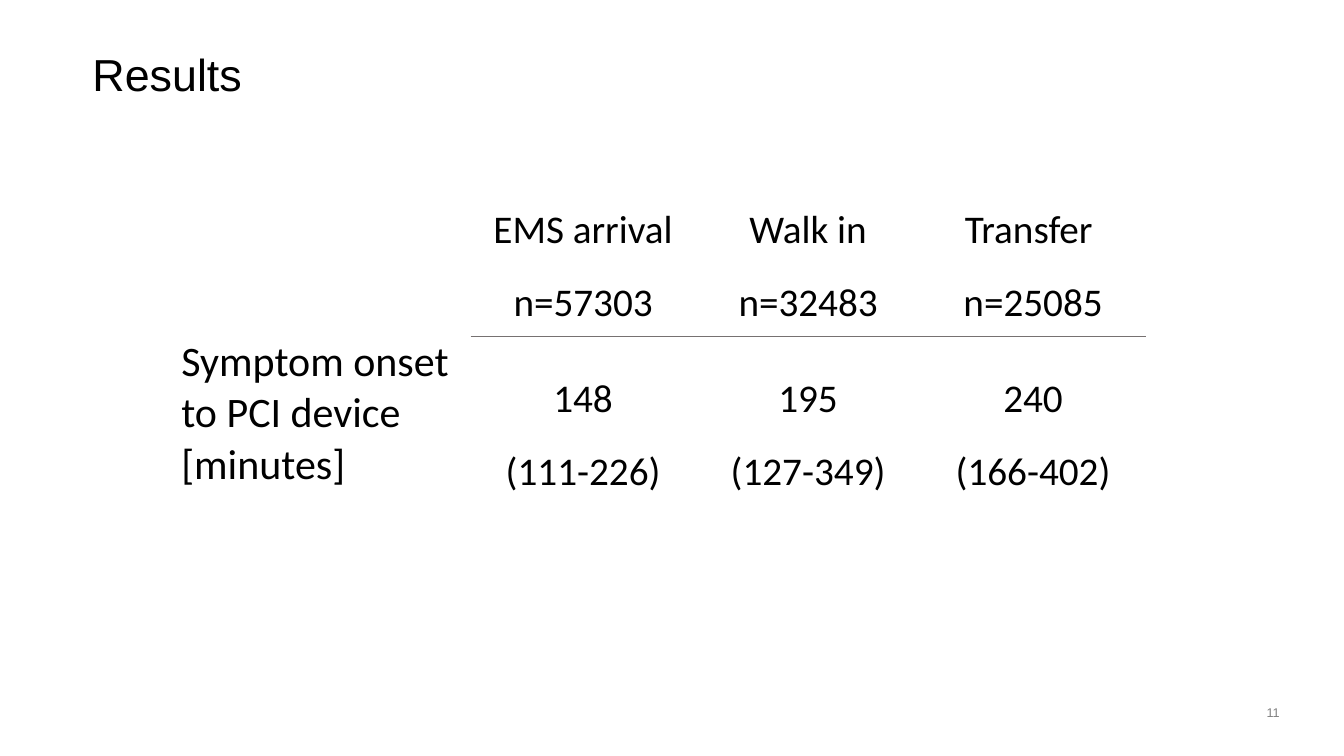
from pptx import Presentation
from pptx.dml.color import RGBColor
from pptx.enum.text import MSO_ANCHOR, PP_ALIGN
from pptx.oxml import parse_xml
from pptx.oxml.ns import nsdecls, qn
from pptx.util import Cm, Pt

BLACK = RGBColor(0x00, 0x00, 0x00)
RULE_GREY = RGBColor(0x76, 0x71, 0x71)
NUMBER_GREY = RGBColor(0x80, 0x80, 0x80)

NO_STYLE_NO_GRID = "{2D5ABB26-0587-4C30-8999-92F81FD0307C}"

# One entry per arrival group: heading, group size, median, range
GROUPS = [
    ("EMS arrival", "n=57303", "148", "(111-226)"),
    ("Walk in", "n=32483", "195", "(127-349)"),
    ("Transfer ", "n=25085", "240", "(166-402)"),
]


def format_paragraph(paragraph, text, font_name, size, color, align):
    paragraph.text = text
    paragraph.alignment = align
    paragraph.font.name = font_name
    paragraph.font.size = Pt(size)
    paragraph.font.color.rgb = color


def add_title(slide, text):
    title = slide.shapes.title
    title.left, title.top = Cm(2.33), Cm(1.02)
    title.width, title.height = Cm(29.21), Cm(1.83)
    frame = title.text_frame
    frame.margin_left = frame.margin_right = 0
    frame.margin_top = frame.margin_bottom = 0
    frame.vertical_anchor = MSO_ANCHOR.MIDDLE
    heading = frame.paragraphs[0]
    format_paragraph(heading, text, "Arial", 32, BLACK, PP_ALIGN.LEFT)
    heading.line_spacing = 0.9


def fill_cell(cell, lines, size, align, anchor):
    cell.vertical_anchor = anchor
    cell.margin_left = cell.margin_right = Cm(0.1)
    cell.margin_top = cell.margin_bottom = 0
    frame = cell.text_frame
    for index, line in enumerate(lines):
        paragraph = frame.add_paragraph() if index else frame.paragraphs[0]
        format_paragraph(paragraph, line, "Calibri", size, BLACK, align)
        paragraph.space_after = Pt(18)


def add_rule(cell, edge):
    """Draw a 1 pt rule on one edge: 'lnT' for top, 'lnB' for bottom."""
    rule = parse_xml(
        f'<a:{edge} {nsdecls("a")} w="{Pt(1)}"><a:solidFill>'
        f'<a:srgbClr val="{RULE_GREY}"/></a:solidFill></a:{edge}>'
    )
    cell._tc.get_or_add_tcPr().insert(0, rule)


def add_results_table(slide):
    frame = slide.shapes.add_table(
        2, 1 + len(GROUPS), Cm(4.47), Cm(4.95), Cm(24.4), Cm(8.51))
    table = frame.table
    table.first_row = table.horz_banding = False
    table._tbl.tblPr.find(qn("a:tableStyleId")).text = NO_STYLE_NO_GRID
    table.rows[0].height, table.rows[1].height = Cm(3.53), Cm(4.98)
    table.columns[0].width = Cm(7.39)
    for cell in table.iter_cells():
        cell.fill.background()

    # Row label
    fill_cell(table.cell(1, 0), ["Symptom onset to PCI device [minutes]"],
              30, PP_ALIGN.LEFT, MSO_ANCHOR.TOP)

    # Arrival groups, with a rule between heading and values
    for column, (heading, count, median, spread) in enumerate(GROUPS, start=1):
        table.columns[column].width = Cm(5.67)
        header, values = table.cell(0, column), table.cell(1, column)
        fill_cell(header, [heading, count], 28, PP_ALIGN.CENTER, MSO_ANCHOR.MIDDLE)
        fill_cell(values, [median, spread], 28, PP_ALIGN.CENTER, MSO_ANCHOR.MIDDLE)
        add_rule(header, "lnB")
        add_rule(values, "lnT")


def add_page_number(slide, number):
    box = slide.shapes.add_textbox(Cm(31.55), Cm(17.65), Cm(1.07), Cm(0.66))
    box.text_frame.word_wrap = True
    format_paragraph(box.text_frame.paragraphs[0], number, "Arial", 9,
                     NUMBER_GREY, PP_ALIGN.CENTER)


def main():
    deck = Presentation()
    deck.slide_width, deck.slide_height = Cm(33.87), Cm(19.05)
    slide = deck.slides.add_slide(deck.slide_layouts.get_by_name("Title Only"))
    add_title(slide, "Results")
    add_results_table(slide)
    add_page_number(slide, "11")
    deck.save("out.pptx")


if __name__ == "__main__":
    main()
